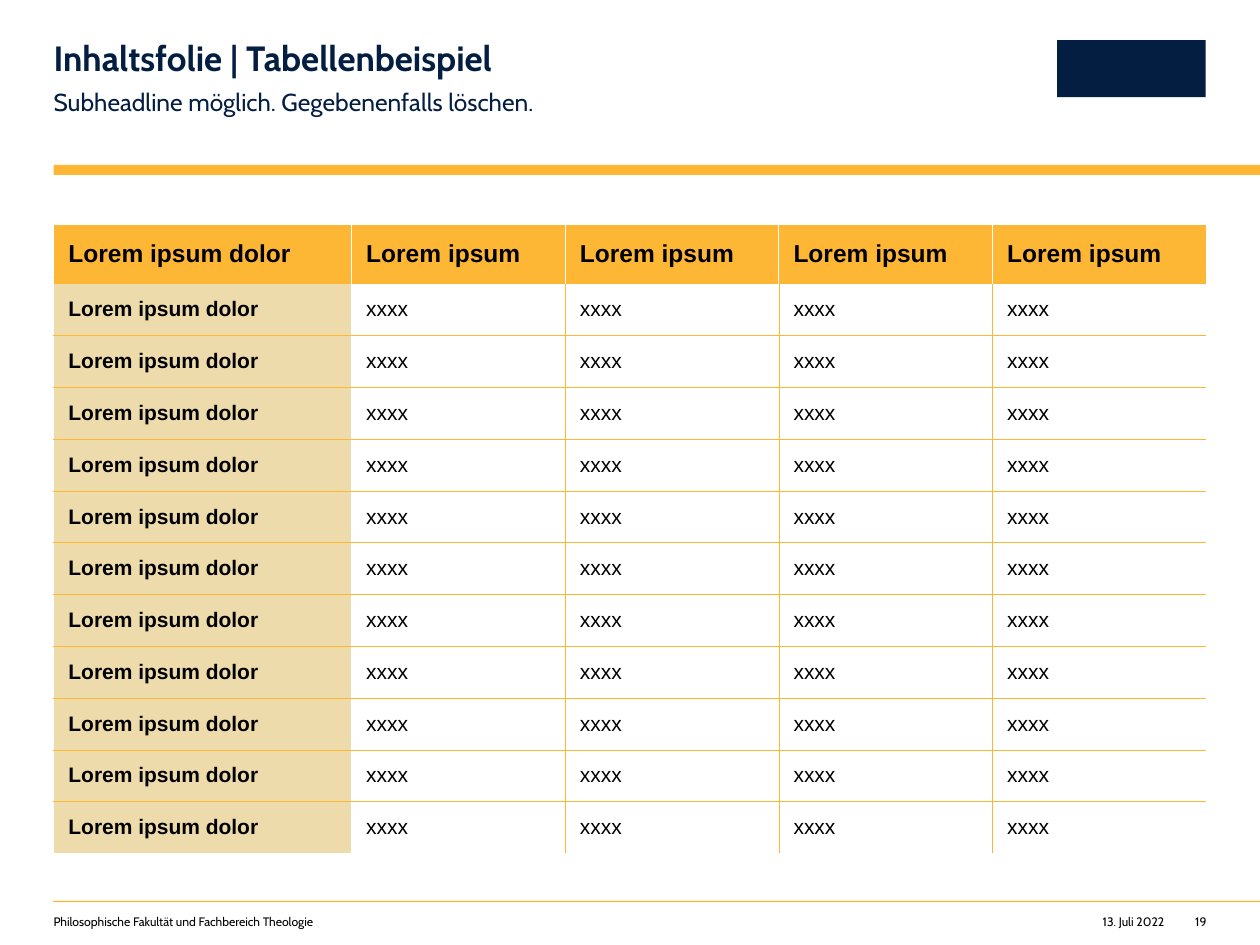
"""Build a table slide with a headline, a gold rule and a footer."""
from lxml.etree import SubElement as Sub
from pptx import Presentation
from pptx.dml.color import RGBColor
from pptx.enum.shapes import MSO_SHAPE as Shape
from pptx.enum.text import MSO_ANCHOR as Anchor, MSO_AUTO_SIZE as Auto, PP_ALIGN as Align
from pptx.oxml.ns import qn
from pptx.util import Pt

GOLD = RGBColor(0xFD, 0xB7, 0x35)
SAND = RGBColor(0xEE, 0xDB, 0xAC)
NAVY = RGBColor(0x04, 0x1E, 0x42)
BLACK = RGBColor(0, 0, 0)
WHITE = RGBColor(255, 255, 255)


def write(para, text, color, **form):
    run = para.add_run()
    run.text = text
    run.font.color.rgb = color
    for key, val in form.items():
        setattr(run.font, key, val)


def edge(cell, side, look):
    line = Sub(cell._tc.get_or_add_tcPr(), qn("a:ln" + side))
    if look is None:
        line.set("w", "0")
        Sub(line, qn("a:noFill"))
    else:
        color, width = look
        line.set("w", str(Pt(width)))
        Sub(Sub(line, qn("a:solidFill")), qn("a:srgbClr")).set("val", str(color))


prs = Presentation()
prs.slide_width, prs.slide_height = Pt(720), Pt(540)
slide = prs.slides.add_slide(prs.slide_layouts[6])
shapes = slide.shapes

bars = [
    (30.6, 94.3, 689.4, 5.6, GOLD),
    (30.4, 514.8, 689.6, 0.8, GOLD),
    (604, 23, 85, 32.6, NAVY),
]
for left, top, width, height, color in bars:
    bar = shapes.add_shape(Shape.RECTANGLE, Pt(left), Pt(top), Pt(width), Pt(height))
    bar.shadow.inherit = False
    bar.fill.solid()
    bar.fill.fore_color.rgb = color
    bar.line.fill.background()

title = {"line_spacing": 0.9}
sub = {"line_spacing": 1.1, "space_after": Pt(8)}
right = {"alignment": Align.RIGHT}
labels = [
    ("Inhaltsfolie | Tabellenbeispiel", 30.6, 23.6, 404, 21.6, 20, True, NAVY, title),
    ("Subheadline möglich. Gegebenenfalls löschen.", 30.6, 48.2, 404, 17, 14, False, NAVY, sub),
    ("Philosophische Fakultät und Fachbereich Theologie", 30.6, 522.6, 323, 8.5, 7, False, BLACK, {}),
    ("13. Juli 2022", 622.8, 522.6, 42.5, 8.5, 7, False, BLACK, right),
    ("19", 675.4, 522.6, 14, 8.5, 7, False, BLACK, right),
]
for text, left, top, width, height, size, bold, color, form in labels:
    frame = shapes.add_textbox(Pt(left), Pt(top), Pt(width), Pt(height)).text_frame
    frame.word_wrap = True
    frame.auto_size = Auto.SHAPE_TO_FIT_TEXT
    for side in ("left", "right", "top", "bottom"):
        setattr(frame, "margin_" + side, 0)
    para = frame.paragraphs[0]
    for key, val in form.items():
        setattr(para, key, val)
    write(para, text, color, name="Cabin", size=Pt(size), bold=bold)

head = ["Lorem ipsum dolor"] + ["Lorem ipsum"] * 4
rows = [head] + [["Lorem ipsum dolor"] + ["xxxx"] * 4] * 11
wide = [170.2] + [122.1] * 4
high = [33.7] + [29.6] * 11
thin, fine, clear = (GOLD, 0.25), (WHITE, 0.5), (WHITE, 1)
tops = [clear, None] + [thin] * 10 + [None]
sides = {True: [clear] + [fine] * 4 + [None], False: [clear] * 2 + [thin] * 3 + [None]}
pads = {"margin_left": 8.5, "margin_right": 8.5, "margin_top": 2.8, "margin_bottom": 2.8}

grid = shapes.add_table(12, 5, Pt(30.6), Pt(128.4), Pt(sum(wide)), Pt(sum(high))).table
grid.first_row = grid.horz_banding = False
for col, width in zip(grid.columns, wide):
    col.width = Pt(width)
for row, height in zip(grid.rows, high):
    row.height = Pt(height)

for r, row in enumerate(rows):
    for c, text in enumerate(row):
        cell = grid.cell(r, c)
        first = r == 0
        edge(cell, "L", sides[first][c])
        edge(cell, "R", sides[first][c + 1])
        edge(cell, "T", tops[r])
        edge(cell, "B", tops[r + 1])
        if first or c == 0:
            cell.fill.solid()
            cell.fill.fore_color.rgb = GOLD if first else SAND
        else:
            cell.fill.background()
        cell.vertical_anchor = Anchor.MIDDLE
        for key, val in pads.items():
            setattr(cell, key, Pt(val))
        write(cell.text_frame.paragraphs[0], text, BLACK, name="Arial",
              size=Pt(14 if first else 12), bold=first or c == 0)

prs.save("out.pptx")
